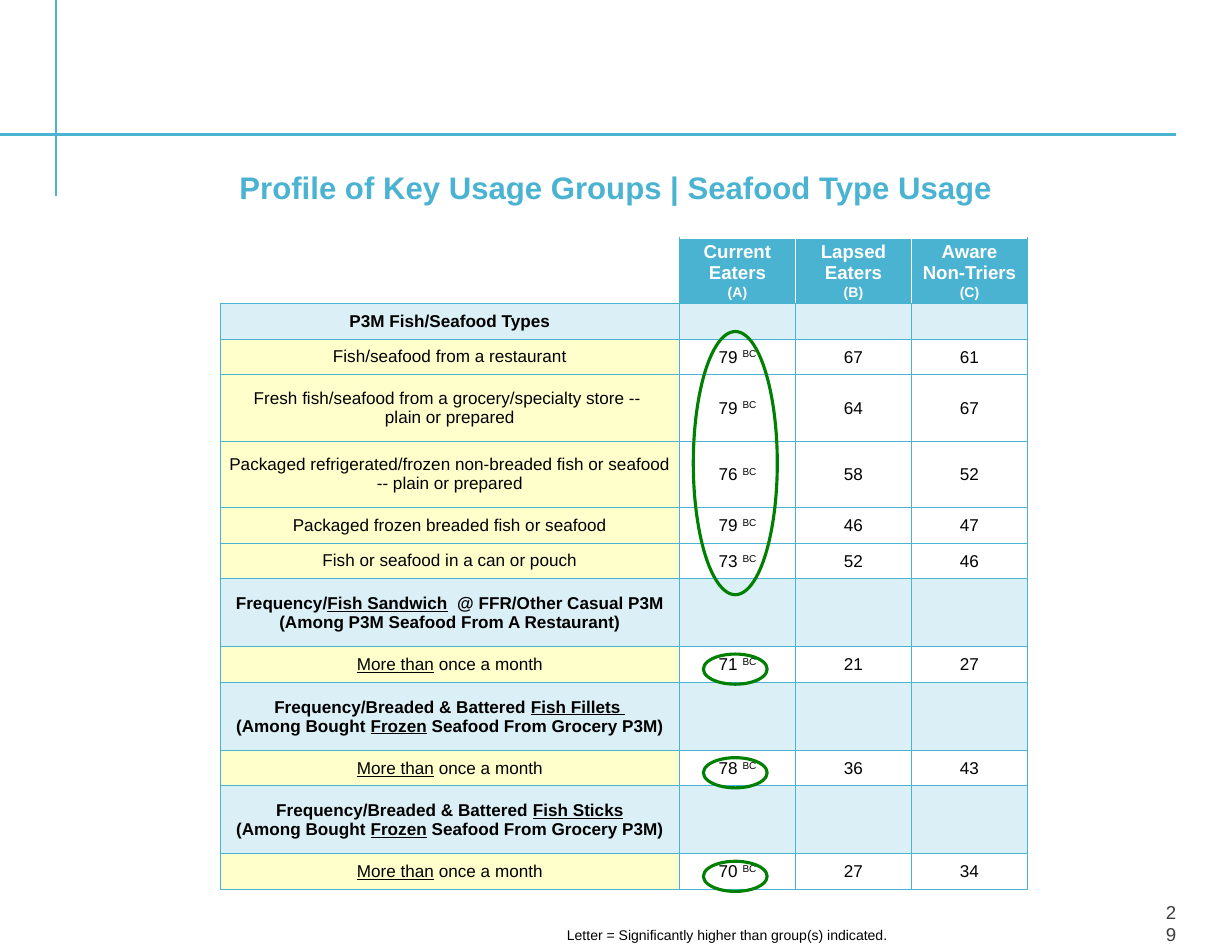
from lxml import etree
from pptx import Presentation
from pptx import util as u
from pptx.dml.color import RGBColor
from pptx.enum import shapes, text
from pptx.oxml.ns import qn

Pt = u.Pt
COLORS = {"teal": "4BB3D2", "pale": "DBF0F6", "cream": "FFFFCC", "white": "FFFFFF",
          "black": "000000", "gray": "3E3E3D", "green": "008000"}


def write(frame, content, size, color, bold=False, align=text.PP_ALIGN.CENTER):
    """Fill the first paragraph; _x_ is underlined, ^x^ is superscript, \\n breaks the line."""
    para = frame.paragraphs[0]
    para.alignment = align
    for i, part in enumerate(content.split("_")):
        for j, piece in enumerate(part.split("^")):
            for k, line in enumerate(piece.split("\n")):
                if k:
                    para.add_line_break()
                if not line:
                    continue
                span = para.add_run()
                span.text = line
                span.font.name = "Arial"
                span.font.size = Pt(size)
                span.font.bold = bold
                span.font.color.rgb = RGBColor.from_string(COLORS[color])
                if i % 2:
                    span.font.underline = True
                if j % 2:
                    span.font._element.set("baseline", "30000")
    if not content:
        etree.SubElement(para._p, qn("a:endParaRPr"), sz=str(size * 100))
    return para


def set_borders(cell, borders):
    """Draw the sides L, R, T and B given as (color, width); the others stay empty."""
    properties = cell._tc.get_or_add_tcPr()
    for side in "LRTB":
        color, width = borders.get(side, (None, 0))
        line = etree.SubElement(properties, qn("a:ln" + side), w=str(Pt(width)))
        if color:
            fill = etree.SubElement(line, qn("a:solidFill"))
            etree.SubElement(fill, qn("a:srgbClr"), val=COLORS[color])
        else:
            etree.SubElement(line, qn("a:noFill"))


deck = Presentation()
deck.slide_width, deck.slide_height = Pt(792), Pt(612)
page = deck.slides.add_slide(deck.slide_layouts[6])

# Crossing rules
for x1, y1, x2, y2 in [(36, 126, 36, 0), (0, 86.4, 756, 86.4)]:
    rule = page.shapes.add_connector(shapes.MSO_CONNECTOR.STRAIGHT, Pt(x1), Pt(y1), Pt(x2), Pt(y2))
    rule.line.color.rgb = RGBColor.from_string(COLORS["teal"])
    rule.line.width = Pt(1.5)
    etree.SubElement(rule._element.spPr, qn("a:effectLst"))

# Usage table: (kind, row height, cells)
SMALL, MEDIUM, LARGE = 22.9, 42.8, 43.7
MONTHLY = "_More than_ once a month"
rows = [
    ("header", 29, ["", "Current\nEaters", "Lapsed\nEaters", "Aware\nNon-Triers"]),
    ("letter", 12.8, ["", "(A)", "(B)", "(C)"]),
    ("section", SMALL, ["P3M Fish/Seafood Types"]),
    ("item", SMALL, ["Fish/seafood from a restaurant", "79", "67", "61"]),
    ("item", MEDIUM, ["Fresh fish/seafood from a grocery/specialty store -- \nplain or prepared",
                      "79", "64", "67"]),
    ("item", MEDIUM, ["Packaged refrigerated/frozen non-breaded fish or seafood -- plain or prepared",
                      "76", "58", "52"]),
    ("item", SMALL, ["Packaged frozen breaded fish or seafood", "79", "46", "47"]),
    ("item", SMALL, ["Fish or seafood in a can or pouch", "73", "52", "46"]),
    ("section", LARGE, ["Frequency/_Fish Sandwich_  @ FFR/Other Casual P3M "
                        "(Among P3M Seafood From A Restaurant)"]),
    ("item", SMALL, [MONTHLY, "71", "21", "27"]),
    ("section", LARGE, ["Frequency/Breaded & Battered _Fish Fillets \n_"
                        "(Among Bought _Frozen_ Seafood From Grocery P3M)"]),
    ("item", SMALL, [MONTHLY, "78", "36", "43"]),
    ("section", LARGE, ["Frequency/Breaded & Battered _Fish Sticks\n_"
                        "(Among Bought _Frozen_ Seafood From Grocery P3M)"]),
    ("item", SMALL, [MONTHLY, "70", "27", "34"]),
]
widths = [295.2, 74.6, 74.6, 74.6]
table = page.shapes.add_table(len(rows), len(widths), Pt(141.6), Pt(153.1), Pt(sum(widths)),
                              Pt(sum(height for _, height, _ in rows))).table
table.first_row = table.horz_banding = False
for column, width in zip(table.columns, widths):
    column.width = Pt(width)

last_section = len(rows) - 2
for r, (kind, height, values) in enumerate(rows):
    table.rows[r].height = Pt(height)
    heading = kind in ("header", "letter")
    for c in range(len(widths)):
        cell = table.cell(r, c)
        content = values[c] if c < len(values) else ""
        if kind == "item" and c == 1:
            content += " ^BC^"
        label = kind == "item" and c == 0 and content != MONTHLY
        cell.margin_left = cell.margin_right = Pt(5 if label else 0.7)
        cell.margin_top = Pt(0 if label else 0.7)
        cell.margin_bottom = 0
        cell.vertical_anchor = {"header": text.MSO_ANCHOR.BOTTOM,
                                "letter": text.MSO_ANCHOR.TOP}.get(kind, text.MSO_ANCHOR.MIDDLE)
        para = write(cell.text_frame, content, {"header": 12, "letter": 9}.get(kind, 11),
                     "white" if heading else "black", kind != "item")
        if label:
            para.space_before = para.space_after = Pt(3)

        if heading:
            borders = {"R": ("teal", 1)}
            if c:
                borders = {"L": ("teal" if c == 1 else "white", 1),
                           "R": ("teal", 0.25) if c == 3 else ("white", 1)}
                if r == 0:
                    borders["T"] = ("white", 1)
            if r == 1:
                borders["B"] = ("teal", 0.25)
        else:
            thin = 0.5 if r >= last_section else 0.25
            thick_left = c == 1 or (c == 0 and r < last_section)
            borders = {"L": ("teal", 1 if thick_left else thin),
                       "R": ("teal", 1 if c == 0 else thin),
                       "T": ("teal", 0.5 if r > last_section else 0.25),
                       "B": ("teal", thin)}
        set_borders(cell, borders)

        fill = "pale" if kind == "section" else None
        if heading and c:
            fill = "teal"
        elif kind == "item" and c == 0:
            fill = "cream"
        if fill:
            cell.fill.solid()
            cell.fill.fore_color.rgb = RGBColor.from_string(COLORS[fill])
        else:
            cell.fill.background()

# Page number, title and footnote: place, margins, anchor, then text style
LEFT, CENTER, RIGHT = text.PP_ALIGN.LEFT, text.PP_ALIGN.CENTER, text.PP_ALIGN.RIGHT
MIDDLE, BOTTOM = text.MSO_ANCHOR.MIDDLE, text.MSO_ANCHOR.BOTTOM
for place, margins, anchor, style in [
    ((749.5, 586.1, 6.5, 18.7), (0, 0, 0, 4.3), MIDDLE, ("29", 12, "gray", False, RIGHT)),
    ((36, 108, 720, 24.5), (3.6, 0, 3.6, 0), BOTTOM,
     ("Profile of Key Usage Groups | Seafood Type Usage", 20, "teal", True, CENTER)),
    ((204.5, 595.4, 476, 10.8), (160, 0, 0, 0), BOTTOM,
     ("Letter = Significantly higher than group(s) indicated.", 9, "black", False, LEFT)),
]:
    frame = page.shapes.add_textbox(*map(Pt, place)).text_frame
    frame.word_wrap = True
    frame.vertical_anchor = anchor
    frame.margin_left, frame.margin_top, frame.margin_right, frame.margin_bottom = map(Pt, margins)
    write(frame, *style)

# Rings around the significant values
small_rings = [(452.2, 420.5 + 66.6 * i, 41, 19.4) for i in range(3)]
for place in [(445.7, 213.1, 54, 169.2), *small_rings]:
    ring = page.shapes.add_shape(shapes.MSO_SHAPE.OVAL, *map(Pt, place))
    ring.shadow.inherit = False
    ring.fill.background()
    ring.line.color.rgb = RGBColor.from_string(COLORS["green"])
    ring.line.width = Pt(2)

deck.save("out.pptx")
